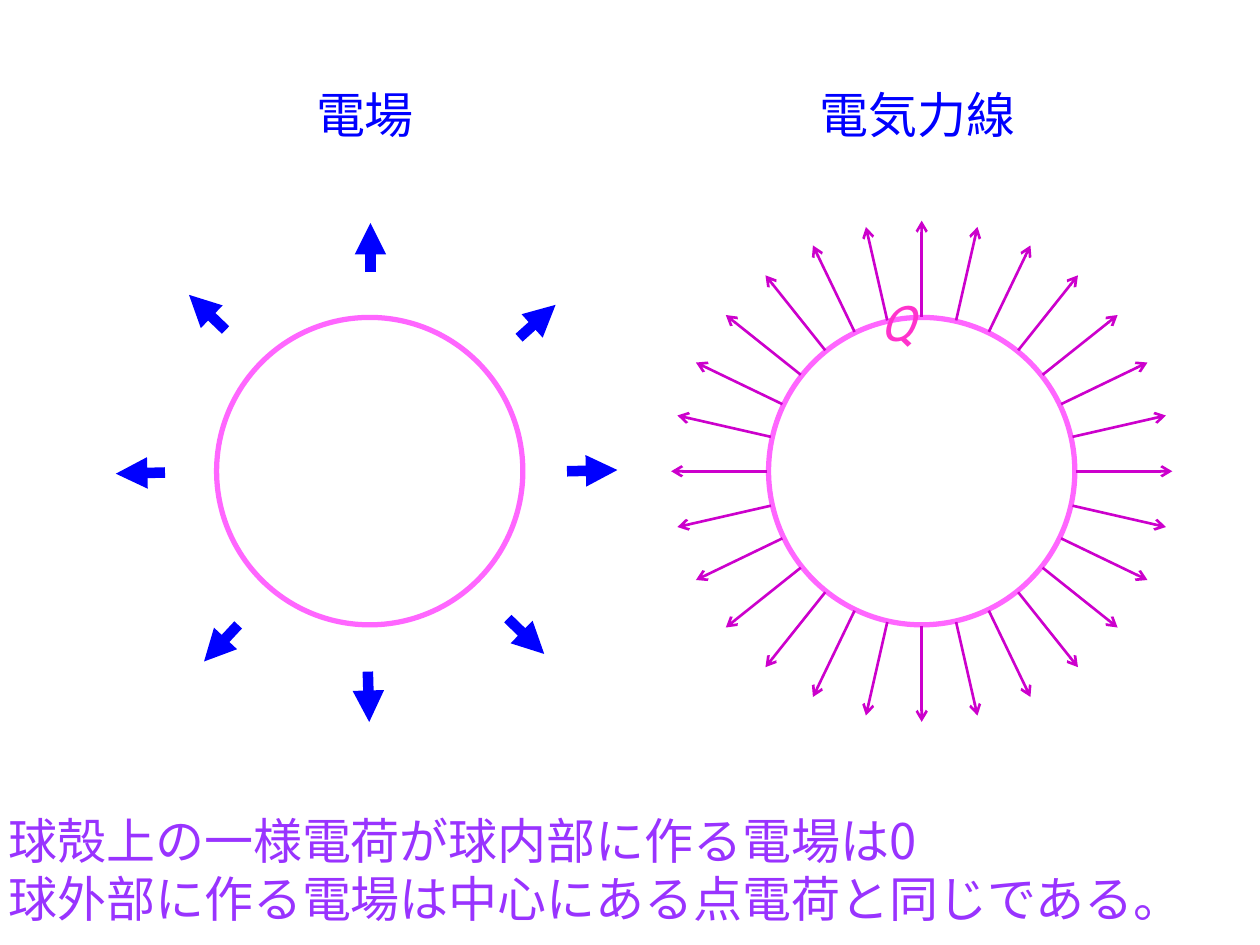
from math import cos, pi, sin

from lxml.etree import SubElement
from pptx import Presentation
from pptx.dml.color import RGBColor
from pptx.enum.shapes import MSO_CONNECTOR, MSO_SHAPE
from pptx.enum.text import MSO_AUTO_SIZE, PP_ALIGN
from pptx.oxml.ns import qn
from pptx.util import Pt

BLUE = RGBColor(0x00, 0x00, 0xFF)
PURPLE = RGBColor(0x99, 0x33, 0xFF)
MAGENTA = RGBColor(0xCC, 0x00, 0xCC)
PINK = RGBColor(0xFF, 0x66, 0xFF)
HOT_PINK = RGBColor(0xFF, 0x33, 0xCC)
JAPANESE_FONT = "Noto Sans CJK JP"
LATIN_FONT = "Times New Roman"
SYMBOL_FONT = "Roboto Slab"

# Content: left, top, width, height in points
SUMMARY = [
    "球殻上の一様電荷が球内部に作る電場は0",
    "球外部に作る電場は中心にある点電荷と同じである。",
]
SUMMARY_BOX = (-2.2, 459.4, 720, 74.9)
CHARGE_BOX = (496.1, 163.4, 36.7, 41)
HEADINGS = [("電場", (173.5, 44.6, 71.3, 41)),
            ("電気力線", (461.5, 44.6, 127.4, 41))]

# Spheres and field lines
SPHERE_LEFTS = (123.8, 439.2)
SPHERE_TOP, SPHERE_WIDTH, SPHERE_HEIGHT = 181.4, 175, 175.7
LINE_CENTER = (526.7, 269.3)
LINE_START, LINE_END = 88.4, 143.2
LINE_COUNT = 28

# Field vectors: start x, start y, end x, end y
FIELD_VECTORS = [
    (324, 269.3, 352.8, 268.6),
    (290.2, 353.5, 311, 373.7),
    (210.2, 383.8, 211, 412.6),
    (136.1, 357.1, 116.6, 378),
    (94.3, 270, 66.2, 270.7),
    (128.9, 188.6, 108, 168.5),
    (211.7, 155.5, 211.7, 127.4),
    (296.6, 193, 317.5, 174.2),
]


def add_text(slide, box, lines, color, font, wrap=False, italic=False,
             align=PP_ALIGN.LEFT, space_before=0):
    frame = slide.shapes.add_textbox(*map(Pt, box)).text_frame
    frame.word_wrap = wrap
    frame.auto_size = MSO_AUTO_SIZE.SHAPE_TO_FIT_TEXT
    for index, line in enumerate(lines):
        paragraph = frame.add_paragraph() if index else frame.paragraphs[0]
        paragraph.alignment = align
        paragraph.space_before = Pt(space_before)
        run = paragraph.add_run()
        run.text = line
        run.font.size = Pt(28)
        run.font.name = font
        run.font.italic = italic
        run.font.color.rgb = color
        SubElement(run.font._element, qn("a:ea"), typeface=JAPANESE_FONT)


def add_arrow(slide, points, color, width, head):
    arrow = slide.shapes.add_connector(MSO_CONNECTOR.STRAIGHT, *map(Pt, points))
    arrow.line.color.rgb = color
    arrow.line.width = Pt(width)
    SubElement(arrow.line._get_or_add_ln(), qn("a:tailEnd"), type=head)
    SubElement(arrow._element.spPr, qn("a:effectLst"))


def main():
    presentation = Presentation()
    presentation.slide_width, presentation.slide_height = Pt(720), Pt(540)
    slide = presentation.slides.add_slide(presentation.slide_layouts[6])

    # Summary
    add_text(slide, SUMMARY_BOX, SUMMARY, PURPLE, JAPANESE_FONT,
             wrap=True, align=PP_ALIGN.JUSTIFY)

    # Charged spheres
    for left in SPHERE_LEFTS:
        sphere = slide.shapes.add_shape(
            MSO_SHAPE.OVAL, Pt(left), Pt(SPHERE_TOP), Pt(SPHERE_WIDTH), Pt(SPHERE_HEIGHT))
        sphere.shadow.inherit = False
        sphere.fill.background()
        sphere.line.color.rgb = PINK
        sphere.line.width = Pt(3)
    add_text(slide, CHARGE_BOX, ["Q"], HOT_PINK, SYMBOL_FONT, italic=True)

    # Lines of force at equal angles
    center_x, center_y = LINE_CENTER
    for index in range(LINE_COUNT):
        angle = 2 * pi * index / LINE_COUNT
        points = [value for radius in (LINE_START, LINE_END)
                  for value in (center_x + radius * cos(angle),
                                center_y + radius * sin(angle))]
        add_arrow(slide, points, MAGENTA, 1.5, "arrow")

    # Electric field vectors
    for points in FIELD_VECTORS:
        add_arrow(slide, points, BLUE, 6, "triangle")

    # Headings
    for heading, box in HEADINGS:
        add_text(slide, box, [heading], BLUE, LATIN_FONT, space_before=5.6)

    presentation.save("out.pptx")


if __name__ == "__main__":
    main()
